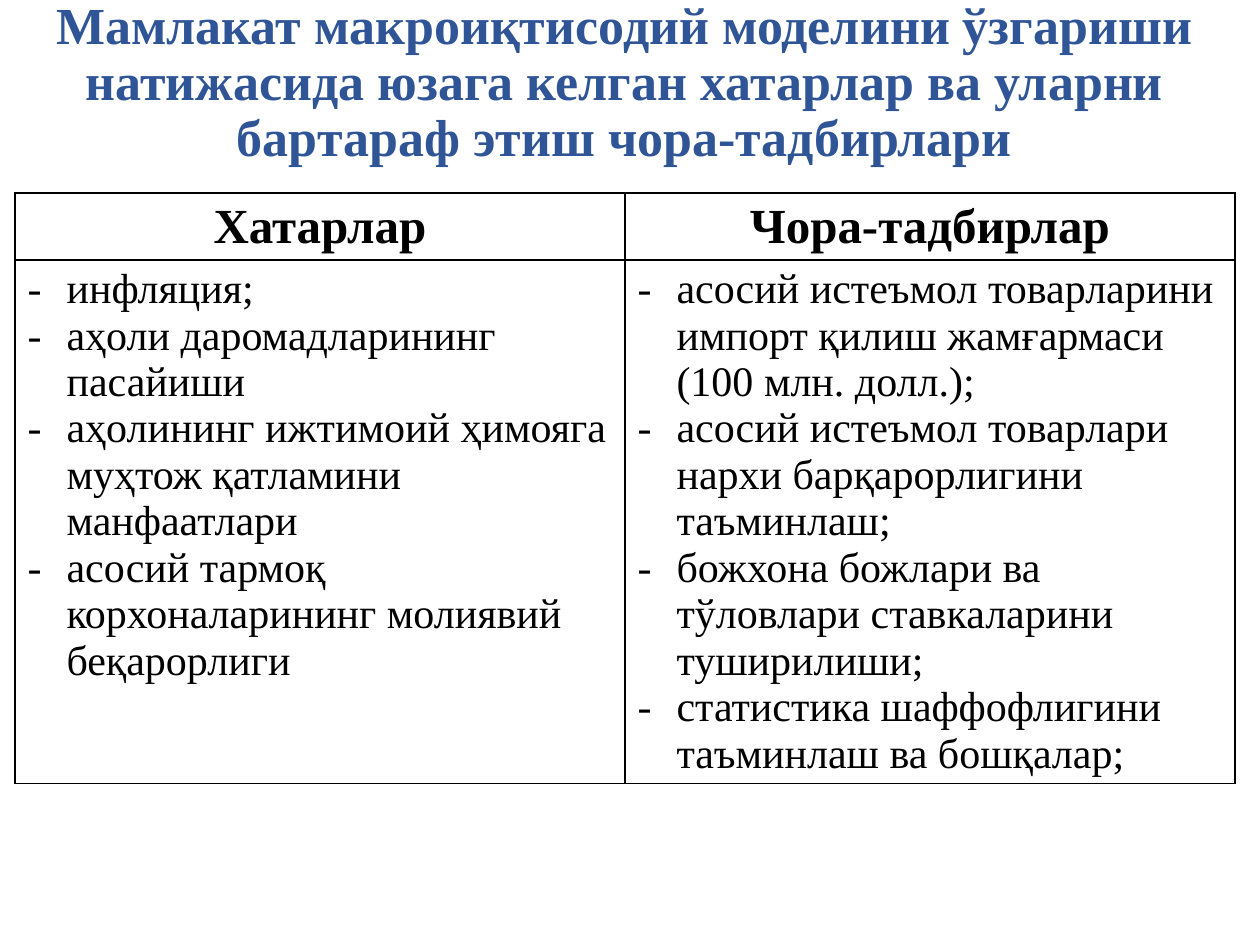
from lxml import etree
from pptx import Presentation
from pptx import util as u
from pptx.dml.color import RGBColor
from pptx.enum import text
from pptx.oxml.ns import qn

PX = 914400 / 126
FONT = "Times New Roman"
COLORS = {"title": "2F5597", "ink": "000000"}
INDENT = round(39 * PX)


def put_text(p, words, size, color="ink", bold=False, align=None, bullet=None):
    p.alignment = align
    r = p.add_run()
    r.text = words
    r.font.name, r.font.size, r.font.bold = FONT, u.Pt(size), bold
    r.font.color.rgb = RGBColor.from_string(COLORS[color])
    if bullet:
        props = p._p.get_or_add_pPr()
        props.set("marL", str(INDENT))
        props.set("indent", str(-INDENT))
        etree.SubElement(props, qn("a:buFont"), typeface=FONT)
        etree.SubElement(props, qn("a:buChar"), char=bullet)


def set_borders(cell):
    props = cell._tc.get_or_add_tcPr()
    for i, side in enumerate(("lnL", "lnR", "lnT", "lnB")):
        line = etree.Element(qn(f"a:{side}"), w=str(u.Pt(1)))
        fill = etree.SubElement(line, qn("a:solidFill"))
        etree.SubElement(fill, qn("a:srgbClr"), val=COLORS["ink"])
        props.insert(i, line)


prs = Presentation()
prs.slide_width, prs.slide_height = u.Inches(10), u.Inches(7.5)
s = prs.slides.add_slide(prs.slide_layouts.get_by_name("Title Only"))

# Title
title = s.shapes.title
title.left, title.top, title.width, title.height = [
    round(n * PX) for n in (15, -8, 1220, 183)]
tf = title.text_frame
tf.word_wrap = True
tf.auto_size = text.MSO_AUTO_SIZE.NONE
tf.vertical_anchor = text.MSO_ANCHOR.MIDDLE
p = tf.paragraphs[0]
p.line_spacing = 0.9
put_text(p, "Мамлакат макроиқтисодий моделини ўзгариши натижасида юзага келган "
         "хатарлар ва уларни бартараф этиш чора-тадбирлари",
         29.7, color="title", bold=True, align=text.PP_ALIGN.CENTER)

# Risks and measures
columns = {
    "Хатарлар": [
        "инфляция;",
        "аҳоли даромадларининг пасайиши",
        "аҳолининг ижтимоий ҳимояга муҳтож қатламини манфаатлари",
        "асосий тармоқ корхоналарининг молиявий беқарорлиги",
    ],
    "Чора-тадбирлар": [
        "асосий истеъмол товарларини импорт қилиш жамғармаси (100 млн. долл.);",
        "асосий истеъмол товарлари нархи барқарорлигини таъминлаш;",
        "божхона божлари ва тўловлари ставкаларини туширилиши;",
        "статистика шаффофлигини таъминлаш ва бошқалар;",
    ],
}
row_heights = (67, 523)
table = s.shapes.add_table(2, len(columns), *[
    round(n * PX) for n in (15, 193, 1220, sum(row_heights))]).table
for row, height in zip(table.rows, row_heights):
    row.height = round(height * PX)

for col, (heading, items) in enumerate(columns.items()):
    head, body = table.cell(0, col), table.cell(1, col)
    for cell in (head, body):
        cell.fill.background()
        set_borders(cell)
    put_text(head.text_frame.paragraphs[0], heading, 28, bold=True,
             align=text.PP_ALIGN.CENTER)
    tf = body.text_frame
    for i, item in enumerate(items):
        p = tf.add_paragraph() if i else tf.paragraphs[0]
        put_text(p, item, 24, bullet="-")

prs.save("out.pptx")
